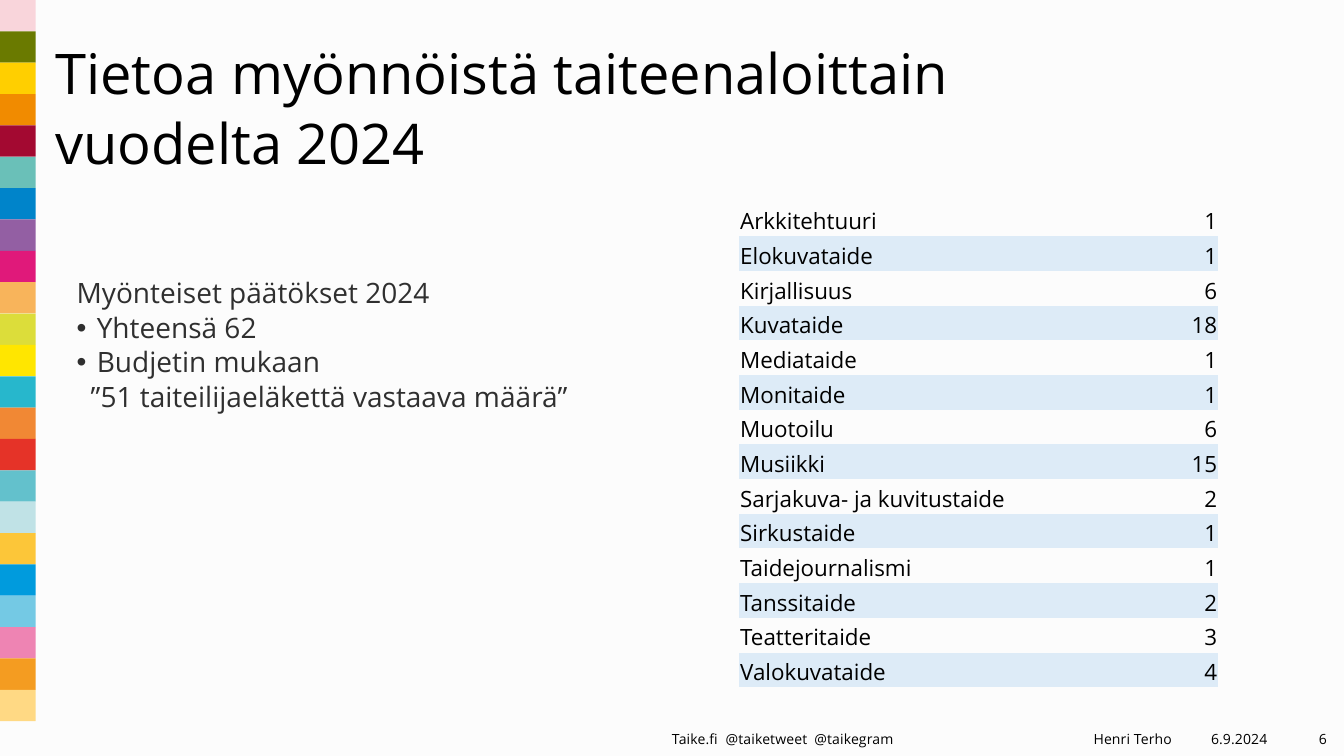
"""Build a slide on the 2024 grants by field of art."""
import dataclasses

import lxml.etree
import pptx
import pptx.dml.color
import pptx.enum.shapes
import pptx.enum.text
import pptx.oxml.ns
import pptx.util

ALIGN = pptx.enum.text.PP_ALIGN
ANCHOR = pptx.enum.text.MSO_ANCHOR
NO_GRID_STYLE = "{2D5ABB26-0587-4C30-8999-92F81FD0307C}"


@dataclasses.dataclass(frozen=True)
class Theme:
    """Colours, font and type sizes of the slide."""
    font: str = "Open Sans"
    background: str = "FCFCFC"
    ink: str = "000000"
    body_ink: str = "2F2F2F"
    band: str = "DDEBF7"
    title_size: int = 40
    body_size: int = 20
    table_size: int = 16
    footer_size: int = 10
    stripes: tuple = (
        "F9D5DB", "6A7A00", "FFCF00", "F18B00", "A30931", "6AC0B8",
        "0084CA", "935FA3", "E0197A", "F8B45B", "DCDD3A", "FFE600",
        "27B7CC", "F18834", "E53328", "63C1CC", "C0E2E6", "FCC639",
        "009BDD", "74C9E4", "EE84B3", "F49C21", "FFD984")


def color(value):
    """Return an RGB colour from its hex text."""
    return pptx.dml.color.RGBColor.from_string(value)


def apply(target, values):
    """Set every attribute named in a dict of format values."""
    for name, value in values.items():
        setattr(target, name, value)


def add_element(parent, tag, **attributes):
    """Append a drawing element with the given attributes."""
    return lxml.etree.SubElement(parent, pptx.oxml.ns.qn(tag), attributes)


class SlideBuilder:
    """Place styled elements on one slide by percentages of its size."""

    def __init__(self, presentation, theme):
        self.theme = theme
        self.width = presentation.slide_width
        self.height = presentation.slide_height
        self.slide = presentation.slides.add_slide(presentation.slide_layouts[1])
        fill = self.slide.background.fill
        fill.solid()
        fill.fore_color.rgb = color(theme.background)

    def across(self, percent):
        return round(self.width * percent / 100)

    def down(self, percent):
        return round(self.height * percent / 100)

    def box(self, left, top, width, height):
        return {"left": self.across(left), "top": self.down(top),
                "width": self.across(width), "height": self.down(height)}

    def frame(self, shape, anchor, margin_top=0):
        apply(shape.text_frame, {
            "word_wrap": True, "auto_size": pptx.enum.text.MSO_AUTO_SIZE.NONE,
            "vertical_anchor": anchor, "margin_left": 0, "margin_right": 0,
            "margin_top": margin_top, "margin_bottom": 0})
        return shape.text_frame

    def set_text(self, paragraph, text, size, ink, **values):
        paragraph.text = text
        apply(paragraph, values)
        for run in paragraph.runs:
            apply(run.font, {"name": self.theme.font, "size": pptx.util.Pt(size)})
            run.font.color.rgb = color(ink)

    def stripes(self, width, height):
        step = height / len(self.theme.stripes)
        for index, stripe_color in enumerate(self.theme.stripes):
            stripe = self.slide.shapes.add_shape(
                pptx.enum.shapes.MSO_SHAPE.RECTANGLE,
                **self.box(0, index * step, width, step))
            stripe.shadow.inherit = False
            stripe.fill.solid()
            stripe.fill.fore_color.rgb = color(stripe_color)
            stripe.line.fill.background()

    def title(self, text, *place):
        shape = self.slide.shapes.title
        apply(shape, self.box(*place))
        frame = self.frame(shape, ANCHOR.BOTTOM)
        self.set_text(frame.paragraphs[0], text, self.theme.title_size, self.theme.ink,
                      alignment=ALIGN.LEFT, line_spacing=pptx.util.Pt(50))

    def body(self, items, margin_top, *place):
        shape = self.slide.placeholders[1]
        apply(shape, self.box(*place))
        frame = self.frame(shape, ANCHOR.TOP, self.down(margin_top))
        for index, (text, indent, bullet) in enumerate(items):
            paragraph = frame.add_paragraph() if index else frame.paragraphs[0]
            margin = pptx.util.Inches(indent)
            properties = paragraph._p.get_or_add_pPr()
            properties.set("marL", str(margin))
            properties.set("indent", str(-margin if bullet else 0))
            if bullet:
                add_element(properties, "a:buChar", char=bullet)
            else:
                add_element(properties, "a:buNone")
            self.set_text(paragraph, text, self.theme.body_size, self.theme.body_ink,
                          line_spacing=0.9, space_before=pptx.util.Pt(3 if index else 0))

    def footer(self, text, alignment, left, width, tabs=()):
        shape = self.slide.shapes.add_textbox(**self.box(left, 95.47, width, 4.53))
        paragraph = self.frame(shape, ANCHOR.MIDDLE).paragraphs[0]
        if tabs:
            tab_list = add_element(paragraph._p.get_or_add_pPr(), "a:tabLst")
            for position in tabs:
                add_element(tab_list, "a:tab", pos=str(self.across(position)), algn="l")
        self.set_text(paragraph, text, self.theme.footer_size, self.theme.ink,
                      alignment=alignment)
        for run in paragraph.runs:
            run._r.get_or_add_rPr().set("spc", "10")

    def table(self, rows, column_widths, left, top, height):
        table = self.slide.shapes.add_table(
            len(rows), len(column_widths),
            **self.box(left, top, sum(column_widths), height)).table
        apply(table, {"first_row": False, "horz_banding": False})
        table._tbl.tblPr.find(pptx.oxml.ns.qn("a:tableStyleId")).text = NO_GRID_STYLE
        for column, width in zip(table.columns, column_widths):
            column.width = self.across(width)
        edge = pptx.util.Inches(0.01)
        for row_index, values in enumerate(rows):
            table.rows[row_index].height = self.down(height / len(rows))
            for column_index, value in enumerate(values):
                cell = table.cell(row_index, column_index)
                apply(cell, {"margin_left": edge, "margin_right": edge,
                             "margin_top": edge, "margin_bottom": 0,
                             "vertical_anchor": ANCHOR.BOTTOM})
                if row_index % 2:
                    cell.fill.solid()
                    cell.fill.fore_color.rgb = color(self.theme.band)
                else:
                    cell.fill.background()
                self.set_text(cell.text_frame.paragraphs[0], str(value),
                              self.theme.table_size, self.theme.ink,
                              alignment=ALIGN.RIGHT if column_index else ALIGN.LEFT)


GRANTS = [
    ("Arkkitehtuuri", 1), ("Elokuvataide", 1), ("Kirjallisuus", 6),
    ("Kuvataide", 18), ("Mediataide", 1), ("Monitaide", 1), ("Muotoilu", 6),
    ("Musiikki", 15), ("Sarjakuva- ja kuvitustaide", 2), ("Sirkustaide", 1),
    ("Taidejournalismi", 1), ("Tanssitaide", 2), ("Teatteritaide", 3),
    ("Valokuvataide", 4)]

DECISIONS = [
    ("Myönteiset päätökset 2024", 0, None),
    ("Yhteensä 62", 0.2, "•"),
    ("Budjetin mukaan", 0.2, "•"),
    ("”51 taiteilijaeläkettä vastaava määrä”", 0.14, None)]


def main():
    presentation = pptx.Presentation()
    apply(presentation, {"slide_width": pptx.util.Inches(13.33),
                         "slide_height": pptx.util.Inches(7.5)})
    builder = SlideBuilder(presentation, Theme())
    builder.stripes(2.65, 95.4)
    builder.title("Tietoa myönnöistä taiteenaloittain\vvuodelta 2024",
                  4.13, 4.53, 94.6, 18.67)
    builder.body(DECISIONS, 10.3, 5.7, 26.67, 43, 64.27)
    builder.table(GRANTS, (28.58, 7.05), 55, 26.67, 64.27)
    builder.footer("Taike.fi\t@taiketweet\t@taikegram", ALIGN.LEFT, 50, 19.2, (4, 10.6))
    builder.footer("Henri Terho", ALIGN.RIGHT, 69.2, 18)
    builder.footer("6.9.2024", ALIGN.RIGHT, 87.25, 7.05)
    builder.footer("6", ALIGN.RIGHT, 94.3, 4.43)
    presentation.save("out.pptx")


if __name__ == "__main__":
    main()
